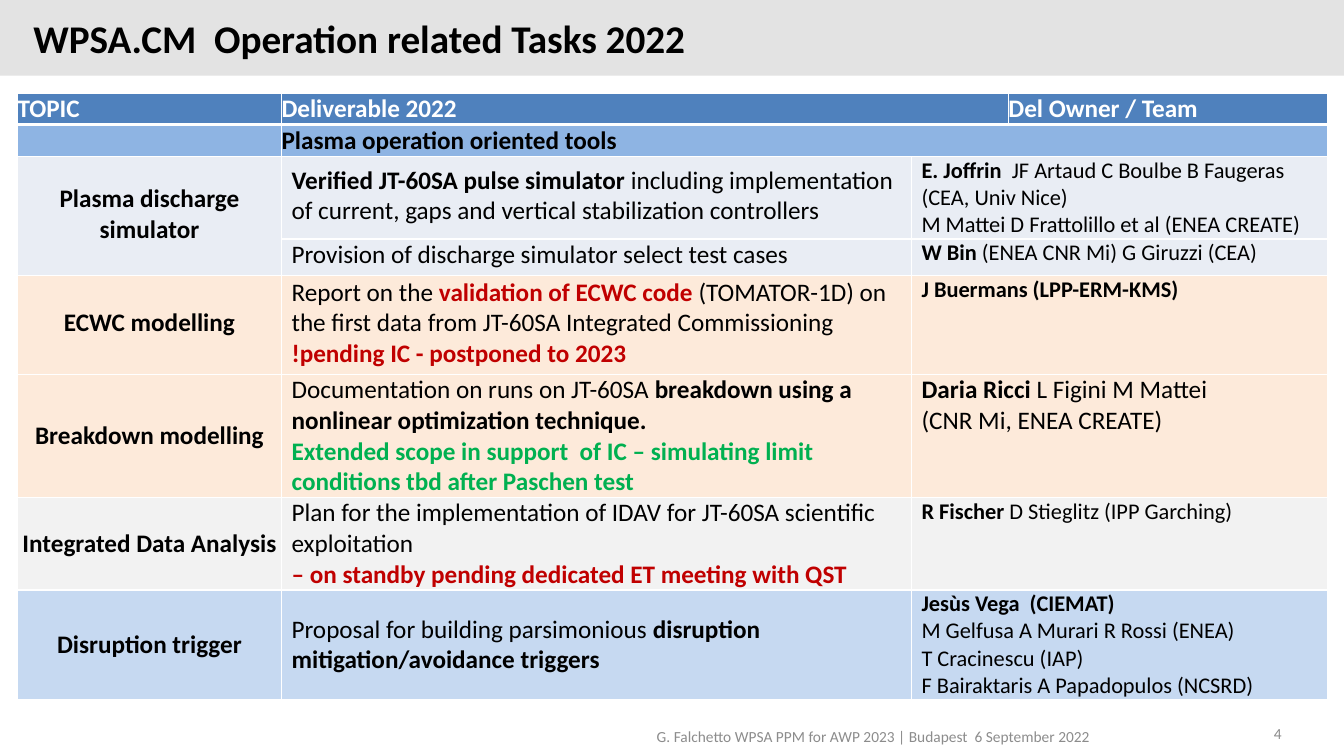
import pptx
import pptx.util
import pptx.dml.color
import pptx.enum.text
import pptx.oxml
import pptx.oxml.ns
from dataclasses import dataclass

Pt = pptx.util.Pt
Align = pptx.enum.text.PP_ALIGN
Anchor = pptx.enum.text.MSO_ANCHOR


@dataclass(frozen=True)
class Theme:
    font: str = "Calibri"
    title_size: int = 28
    table_size: int = 18
    owner_size: int = 16
    footer_size: int = 11
    black: str = "000000"
    white: str = "FFFFFF"
    red: str = "C00000"
    green: str = "00B050"
    grey: str = "8C8C8C"
    band: str = "E3E3E3"
    header: str = "4F81BD"
    section: str = "8EB4E3"
    ice: str = "E9EDF4"
    peach: str = "FDEADA"
    mist: str = "F2F2F2"
    sky: str = "C6D9F1"


THEME = Theme()
STYLES = {
    "plain": (False, THEME.black),
    "strong": (True, THEME.black),
    "alert": (True, THEME.red),
    "scope": (True, THEME.green),
    "head": (True, THEME.white),
    "footer": (False, THEME.grey),
}

TITLE = "WPSA.CM  Operation related Tasks 2022"
HEADINGS = {0: "TOPIC", 1: "Deliverable 2022", 3: "Del Owner / Team"}
SECTION = "Plasma operation oriented tools"
TASKS = [
    ("Plasma discharge simulator", THEME.ice, THEME.owner_size,
     [[("Verified JT-60SA pulse simulator ", "strong"),
       ("including implementation of current, gaps and vertical stabilization controllers", "plain")]],
     [[("E. Joffrin  ", "strong"), ("JF Artaud C Boulbe B Faugeras (CEA, Univ Nice)", "plain")],
      [("M Mattei D Frattolillo et al (ENEA CREATE)", "plain")]]),
    (None, THEME.ice, THEME.owner_size,
     [[("Provision of discharge simulator select test cases", "plain")]],
     [[("W Bin", "strong"), (" (ENEA CNR Mi) G Giruzzi (CEA)", "plain")]]),
    ("ECWC modelling", THEME.peach, THEME.owner_size,
     [[("Report on the ", "plain"), ("validation of ECWC code ", "alert"),
       ("(TOMATOR-1D) on the first data from JT-60SA Integrated Commissioning", "plain")],
      [("!pending IC - postponed to 2023", "alert")]],
     [[("J Buermans (LPP-ERM-KMS)", "strong")]]),
    ("Breakdown modelling", THEME.peach, THEME.table_size,
     [[("Documentation on runs on JT-60SA ", "plain"),
       ("breakdown using a nonlinear optimization technique.", "strong")],
      [("Extended scope in support  of IC – simulating limit conditions tbd after Paschen test", "scope")]],
     [[("Daria Ricci ", "strong"), ("L Figini M Mattei", "plain")],
      [("(CNR Mi, ENEA CREATE)", "plain")]]),
    ("Integrated Data Analysis", THEME.mist, THEME.owner_size,
     [[("Plan for the implementation of IDAV for JT-60SA scientific exploitation", "plain")],
      [("– on standby pending dedicated ET meeting with QST", "alert")]],
     [[("R Fischer ", "strong"), ("D Stieglitz (IPP Garching)", "plain")]]),
    ("Disruption trigger", THEME.sky, THEME.owner_size,
     [[("Proposal for building parsimonious ", "plain"),
       ("disruption mitigation/avoidance triggers", "strong")]],
     [[("Jesùs Vega  (CIEMAT)", "strong")],
      [("M Gelfusa A Murari R Rossi (ENEA)", "plain")],
      [("T Cracinescu (IAP)", "plain")],
      [("F Bairaktaris A Papadopulos (NCSRD)", "plain")]]),
]
FOOTERS = [
    ("4", (865.5, 514, 57, 16), Align.RIGHT),
    ("G. Falchetto WPSA PPM for AWP 2023 | Budapest  6 September 2022", (462, 516, 404, 26), Align.LEFT),
]

SLIDE_SIZE = (960, 540)
TABLE_ORIGIN = (12.5, 67)
COLUMNS = [188.6, 450, 69.2, 228.2]
ROWS = [22, 23, 58.6, 25.8, 70.6, 88, 65.8, 78]
PADDED_ROWS = range(2, 5)


def colour(code):
    return pptx.dml.color.RGBColor.from_string(code)


def write(frame, paragraphs, size, align=Align.LEFT):
    frame.word_wrap = True
    for index, spans in enumerate(paragraphs):
        para = frame.add_paragraph() if index else frame.paragraphs[0]
        para.alignment = align
        for text, style in spans:
            span = para.add_run()
            span.text = text
            bold, code = STYLES[style]
            span.font.name = THEME.font
            span.font.size = Pt(size)
            span.font.bold = bold
            span.font.color.rgb = colour(code)


def paint(cell, fill, top, bottom):
    cell.margin_left = cell.margin_right = cell.margin_top = cell.margin_bottom = 0
    properties = cell._tc.get_or_add_tcPr()
    for side, width in (("L", 1), ("R", 1), ("T", top), ("B", bottom)):
        properties.append(pptx.oxml.parse_xml(
            f'<a:ln{side} {pptx.oxml.ns.nsdecls("a")} w="{Pt(width)}"><a:solidFill>'
            f'<a:srgbClr val="{THEME.white}"/></a:solidFill></a:ln{side}>'))
    cell.fill.solid()
    cell.fill.fore_color.rgb = colour(fill)


def add_title(page):
    band = page.shapes.add_shape(pptx.enum.shapes.MSO_SHAPE.RECTANGLE, 0, 0, Pt(SLIDE_SIZE[0]), Pt(54))
    band.shadow.inherit = False
    band.fill.solid()
    band.fill.fore_color.rgb = colour(THEME.band)
    band.line.fill.background()
    title = page.shapes.title
    title.element.addprevious(band.element)
    title.left, title.top, title.width, title.height = map(Pt, (16.6, 13.7, 792, 36))
    title.text_frame.vertical_anchor = Anchor.MIDDLE
    write(title.text_frame, [[(TITLE, "strong")]], THEME.title_size)
    title.text_frame.paragraphs[0].line_spacing = Pt(24)


def add_tasks(page):
    left, top = TABLE_ORIGIN
    table = page.shapes.add_table(len(ROWS), len(COLUMNS), Pt(left), Pt(top),
                                  Pt(sum(COLUMNS)), Pt(sum(ROWS))).table
    for column, width in zip(table.columns, COLUMNS):
        column.width = Pt(width)
    for row, height in zip(table.rows, ROWS):
        row.height = Pt(height)

    fills = [THEME.header, THEME.section] + [task[1] for task in TASKS]
    for number, (row, fill) in enumerate(zip(table.rows, fills)):
        for cell in row.cells:
            paint(cell, fill, 3 if number == 1 else 1, 3 if number == 0 else 1)

    table.cell(0, 1).merge(table.cell(0, 2))
    table.cell(1, 1).merge(table.cell(1, 3))
    for column, heading in HEADINGS.items():
        write(table.cell(0, column).text_frame, [[(heading, "head")]], THEME.table_size)
    section = table.cell(1, 1)
    section.vertical_anchor = Anchor.MIDDLE
    write(section.text_frame, [[(SECTION, "strong")]], THEME.table_size)

    for number, (topic, fill, owner_size, deliverable, owner) in enumerate(TASKS, 2):
        topic_cell, deliverable_cell, owner_cell = (table.cell(number, column) for column in range(3))
        owner_cell.merge(table.cell(number, 3))
        owner_cell.margin_left = Pt(7.2)
        deliverable_cell.margin_left = deliverable_cell.margin_right = Pt(7.2)
        for cell in (topic_cell, deliverable_cell):
            cell.vertical_anchor = Anchor.MIDDLE
            if number in PADDED_ROWS:
                cell.margin_top, cell.margin_bottom = Pt(0.7), Pt(3.6)
        if topic:
            write(topic_cell.text_frame, [[(topic, "strong")]], THEME.table_size, Align.CENTER)
        else:
            table.cell(number - 1, 0).merge(topic_cell)
        write(deliverable_cell.text_frame, deliverable, THEME.table_size)
        write(owner_cell.text_frame, owner, owner_size)


def main():
    deck = pptx.Presentation()
    deck.slide_width, deck.slide_height = map(Pt, SLIDE_SIZE)
    page = deck.slides.add_slide(deck.slide_layouts[5])
    add_title(page)
    add_tasks(page)
    for text, place, align in FOOTERS:
        box = page.shapes.add_textbox(*map(Pt, place))
        write(box.text_frame, [[(text, "footer")]], THEME.footer_size, align)
    deck.save("out.pptx")


if __name__ == "__main__":
    main()
